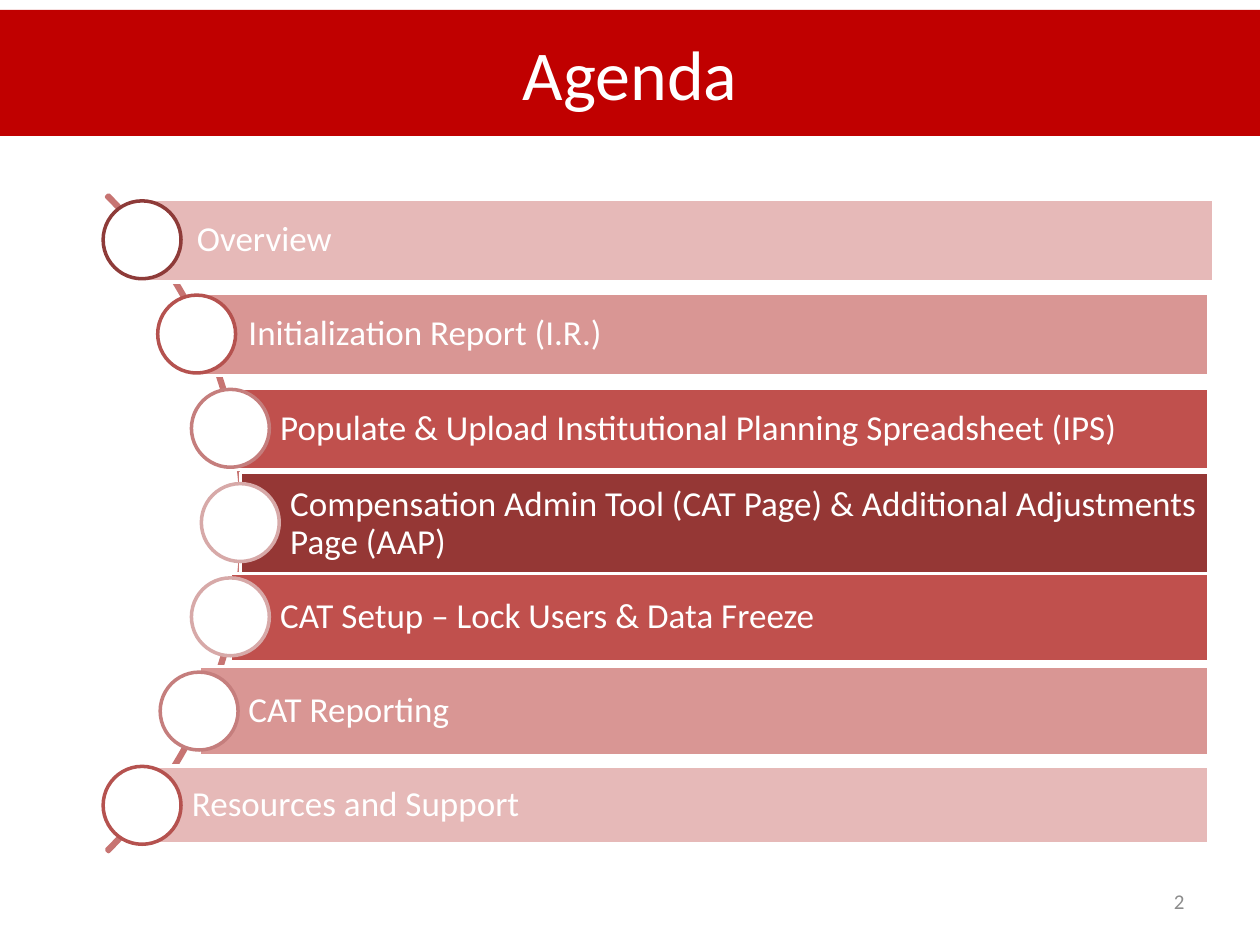
from dataclasses import dataclass

from pptx import Presentation
from pptx.dml.color import RGBColor
from pptx.enum.shapes import MSO_SHAPE
from pptx.enum.text import MSO_ANCHOR, PP_ALIGN
from pptx.util import Cm, Pt

RECTANGLE = MSO_SHAPE.RECTANGLE
OVAL = MSO_SHAPE.OVAL
BLOCK_ARC = MSO_SHAPE.BLOCK_ARC
MIDDLE = MSO_ANCHOR.MIDDLE
LEFT, CENTER, RIGHT = PP_ALIGN.LEFT, PP_ALIGN.CENTER, PP_ALIGN.RIGHT
TITLE_ONLY = 5


@dataclass(frozen=True)
class Theme:
    font: str = "Calibri"
    white: str = "FFFFFF"
    banner: str = "C00000"
    arc: str = "C77472"
    number: str = "8C8C8C"
    pale: str = "E6B9B8"
    light: str = "D99694"
    medium: str = "C0504D"
    dark: str = "953735"
    title_size: int = 40
    item_size: int = 20
    number_size: int = 12
    line_width: int = 2


@dataclass(frozen=True)
class AgendaItem:
    text: str
    fill: str
    left: float
    top: float
    height: float
    circle_left: float
    circle_line: str
    right: float = 24.36


THEME = Theme()
CIRCLE_SIZE = 1.57
CIRCLE_TOP = 4.05
CIRCLE_PITCH = 1.9

ITEMS = [
    AgendaItem("Overview", THEME.pale, 2.97, 4.01, 1.68, 2.08, "8E3B39", 24.46),
    AgendaItem("Initialization Report (I.R.)", THEME.light, 4.01, 5.92, 1.65, 3.18, "B5524F"),
    AgendaItem("Populate & Upload Institutional Planning Spreadsheet (IPS)",
               THEME.medium, 4.65, 7.82, 1.65, 3.86, "C57E7D"),
    AgendaItem("Compensation Admin Tool (CAT Page) & Additional Adjustments Page (AAP)",
               THEME.dark, 4.85, 9.53, 2.06, 4.06, "D7A9A8"),
    AgendaItem("CAT Setup – Lock Users & Data Freeze",
               THEME.medium, 4.65, 11.56, 1.78, 3.86, "D7A9A8"),
    AgendaItem("CAT Reporting", THEME.light, 4.01, 13.44, 1.8, 3.23, "C57E7D"),
    AgendaItem("Resources and Support", THEME.pale, 2.87, 15.44, 1.57, 2.08, "B5524F"),
]


def write_text(shape, text: str, *, size: int, color: str = THEME.white,
               align=LEFT, line_spacing: float = 1.0) -> None:
    frame = shape.text_frame
    frame.word_wrap = True
    frame.vertical_anchor = MIDDLE
    para = frame.paragraphs[0]
    para.alignment = align
    para.line_spacing = line_spacing
    span = para.add_run()
    span.text = text
    span.font.name = THEME.font
    span.font.size = Pt(size)
    span.font.color.rgb = RGBColor.from_string(color)


def draw_shape(page, kind, left: float, top: float, width: float, height: float,
               *, line: str, fill: str = ""):
    shape = page.shapes.add_shape(kind, Cm(left), Cm(top), Cm(width), Cm(height))
    shape.shadow.inherit = False
    if fill:
        shape.fill.solid()
        shape.fill.fore_color.rgb = RGBColor.from_string(fill)
    else:
        shape.fill.background()
    shape.line.color.rgb = RGBColor.from_string(line)
    shape.line.width = Pt(THEME.line_width)
    return shape


def draw_title(page, text: str) -> None:
    title = page.shapes.title
    title.left, title.top, title.width, title.height = Cm(0), Cm(0.2), Cm(25.4), Cm(2.54)
    title.fill.solid()
    title.fill.fore_color.rgb = RGBColor.from_string(THEME.banner)
    write_text(title, text, size=THEME.title_size, align=CENTER)


def draw_arc(page) -> None:
    arc = draw_shape(page, BLOCK_ARC, -13.79, 1.19, 18.72, 18.72, line=THEME.arc)
    # From 315 to 45 degrees, almost without thickness
    for index, value in enumerate((189, 27, 0.003)):
        arc.adjustments[index] = value


def draw_item(page, item: AgendaItem, index: int) -> None:
    bar = draw_shape(page, RECTANGLE, item.left, item.top, item.right - item.left,
                     item.height, line=THEME.white, fill=item.fill)
    frame = bar.text_frame
    frame.margin_left = Cm(1)
    frame.margin_top = frame.margin_right = frame.margin_bottom = Cm(0.15)
    write_text(bar, item.text, size=THEME.item_size, line_spacing=0.9)
    draw_shape(page, OVAL, item.circle_left, CIRCLE_TOP + index * CIRCLE_PITCH,
               CIRCLE_SIZE, CIRCLE_SIZE, line=item.circle_line, fill=THEME.white)


def draw_page_number(page, number: int) -> None:
    box = page.shapes.add_textbox(Cm(18.2), Cm(17.65), Cm(5.93), Cm(1.02))
    write_text(box, str(number), size=THEME.number_size, color=THEME.number, align=RIGHT)


def main() -> None:
    deck = Presentation()
    deck.slide_width, deck.slide_height = Cm(25.4), Cm(19.05)
    page = deck.slides.add_slide(deck.slide_layouts[TITLE_ONLY])

    # Banner
    draw_title(page, "Agenda")

    # Agenda list along the arc
    draw_arc(page)
    for index, item in enumerate(ITEMS):
        draw_item(page, item, index)

    # Footer
    draw_page_number(page, 2)
    deck.save("out.pptx")


if __name__ == "__main__":
    main()
